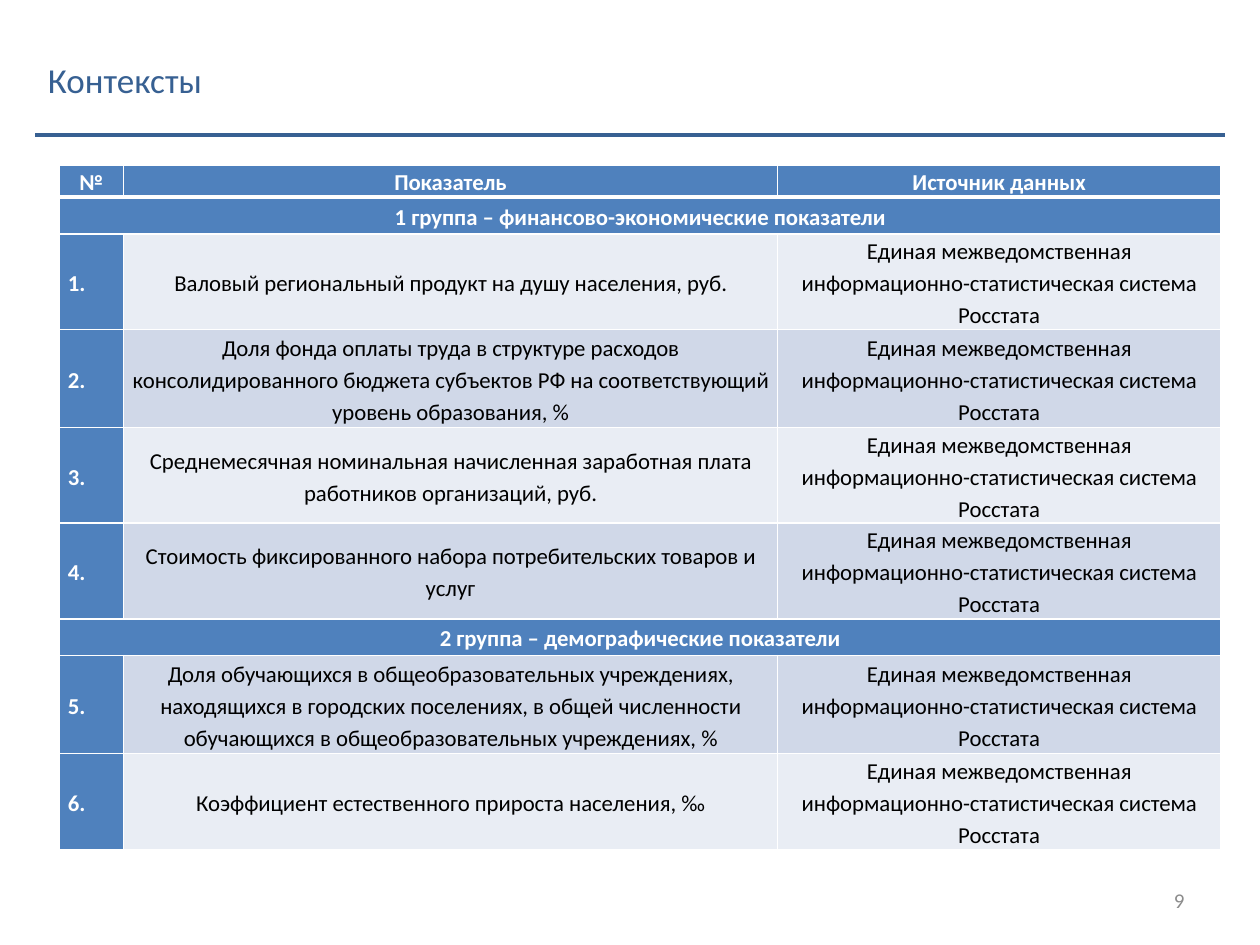
from dataclasses import dataclass

import pptx
import pptx.dml.color
import pptx.enum.shapes
import pptx.enum.text
import pptx.oxml
import pptx.oxml.ns
import pptx.util
from pptx.util import Cm

ALIGN = pptx.enum.text.PP_ALIGN
MIDDLE = pptx.enum.text.MSO_ANCHOR.MIDDLE


@dataclass(frozen=True)
class Theme:
    font: str = "Calibri"
    title_size: float = 20
    table_size: float = 13
    number_size: float = 12
    title: str = "376092"
    accent: str = "4F81BD"
    light_band: str = "E9EDF4"
    dark_band: str = "D0D8E8"
    white: str = "FFFFFF"
    black: str = "000000"
    grey: str = "8C8C8C"


THEME = Theme()
SOURCE = "Единая межведомственная информационно-статистическая система Росстата"
HEADINGS = ("№", "Показатель", "Источник данных")
GROUPS = (
    ("1 группа – финансово-экономические показатели", (
        "Валовый региональный продукт на душу населения, руб.",
        "Доля фонда оплаты труда в структуре расходов консолидированного "
        "бюджета субъектов РФ на соответствующий уровень образования, %",
        "Среднемесячная номинальная начисленная заработная плата "
        "работников организаций, руб.",
        "Стоимость фиксированного набора потребительских товаров и услуг",
    )),
    ("2 группа – демографические показатели", (
        "Доля обучающихся в общеобразовательных учреждениях, находящихся "
        "в городских поселениях, в общей численности обучающихся в "
        "общеобразовательных учреждениях, %",
        "Коэффициент естественного прироста населения, ‰",
    )),
)
COLUMN_WIDTHS = (1.3, 13.18, 8.94)
ROW_HEIGHTS = (0.64, 0.74, 1.83, 1.98, 1.83, 1.83, 0.74, 1.98, 1.83)


def rgb(color):
    return pptx.dml.color.RGBColor.from_string(color)


def write_text(frame, text, size, color, align, bold=False):
    frame.word_wrap = True
    paragraph = frame.paragraphs[0]
    paragraph.alignment = align
    run = paragraph.add_run()
    run.text = text
    run.font.name = THEME.font
    run.font.size = pptx.util.Pt(size)
    run.font.bold = bold
    run.font.color.rgb = rgb(color)
    return paragraph


def add_title(slide, text):
    title = slide.shapes.title
    title.left, title.top, title.width, title.height = Cm(0.71), Cm(0.91), Cm(22.86), Cm(1.37)
    title.text_frame.vertical_anchor = MIDDLE
    write_text(title.text_frame, text, THEME.title_size, THEME.title, ALIGN.LEFT)


def add_rule(slide):
    rule = slide.shapes.add_connector(
        pptx.enum.shapes.MSO_CONNECTOR.STRAIGHT, Cm(0.71), Cm(2.72), Cm(24.69), Cm(2.72))
    rule.line.color.rgb = rgb(THEME.title)
    rule.line.width = pptx.util.Pt(2.25)
    properties = rule._element.spPr
    properties.append(properties.makeelement(pptx.oxml.ns.qn("a:effectLst"), {}))


def set_borders(cell, top, bottom):
    """Draw white cell borders; top and bottom are widths in points."""
    properties = cell._tc.get_or_add_tcPr()
    for side, width in (("L", 1), ("R", 1), ("T", top), ("B", bottom)):
        properties.append(pptx.oxml.parse_xml(
            f'<a:ln{side} {pptx.oxml.ns.nsdecls("a")} w="{pptx.util.Pt(width)}">'
            f'<a:solidFill><a:srgbClr val="{THEME.white}"/></a:solidFill></a:ln{side}>'))


def format_cell(cell, fill, top=1, bottom=1):
    set_borders(cell, top, bottom)
    cell.fill.solid()
    cell.fill.fore_color.rgb = rgb(fill)
    cell.vertical_anchor = MIDDLE
    cell.margin_left = cell.margin_right = Cm(0.18)
    cell.margin_top = cell.margin_bottom = 0


def write_cell(cell, text, color, align=ALIGN.CENTER, bold=False):
    paragraph = write_text(cell.text_frame, text, THEME.table_size, color, align, bold)
    paragraph.line_spacing = 1.15


def fill_header(table):
    for column, heading in enumerate(HEADINGS):
        cell = table.cell(0, column)
        format_cell(cell, THEME.accent, bottom=3)
        write_cell(cell, heading, THEME.white, bold=True)


def fill_group_row(table, row, name):
    for column in range(len(HEADINGS)):
        format_cell(table.cell(row, column), THEME.accent, top=3 if row == 1 else 1)
    table.cell(row, 0).merge(table.cell(row, len(HEADINGS) - 1))
    write_cell(table.cell(row, 0), name, THEME.white, bold=True)


def fill_indicator_row(table, row, number, indicator):
    band = THEME.dark_band if row % 2 else THEME.light_band
    format_cell(table.cell(row, 0), THEME.accent)
    write_cell(table.cell(row, 0), f"{number}.", THEME.white, ALIGN.LEFT, bold=True)
    for column, text in enumerate((indicator, SOURCE), start=1):
        format_cell(table.cell(row, column), band)
        write_cell(table.cell(row, column), text, THEME.black)


def add_indicator_table(slide):
    table = slide.shapes.add_table(
        len(ROW_HEIGHTS), len(COLUMN_WIDTHS), Cm(1.19), Cm(3.33),
        Cm(sum(COLUMN_WIDTHS)), Cm(sum(ROW_HEIGHTS))).table
    for column, width in zip(table.columns, COLUMN_WIDTHS):
        column.width = Cm(width)
    for row, height in zip(table.rows, ROW_HEIGHTS):
        row.height = Cm(height)
    fill_header(table)
    row, number = 1, 1
    for name, indicators in GROUPS:
        fill_group_row(table, row, name)
        row += 1
        for indicator in indicators:
            fill_indicator_row(table, row, number, indicator)
            row += 1
            number += 1


def add_page_number(slide, number):
    box = slide.shapes.add_textbox(Cm(18.2), Cm(17.65), Cm(5.93), Cm(1.01))
    box.text_frame.vertical_anchor = MIDDLE
    write_text(box.text_frame, number, THEME.number_size, THEME.grey, ALIGN.RIGHT)


def main():
    presentation = pptx.Presentation()
    presentation.slide_width, presentation.slide_height = Cm(25.4), Cm(19.05)
    slide = presentation.slides.add_slide(presentation.slide_layouts[5])
    add_title(slide, "Контексты")
    add_indicator_table(slide)
    add_page_number(slide, "9")
    add_rule(slide)
    presentation.save("out.pptx")


if __name__ == "__main__":
    main()
